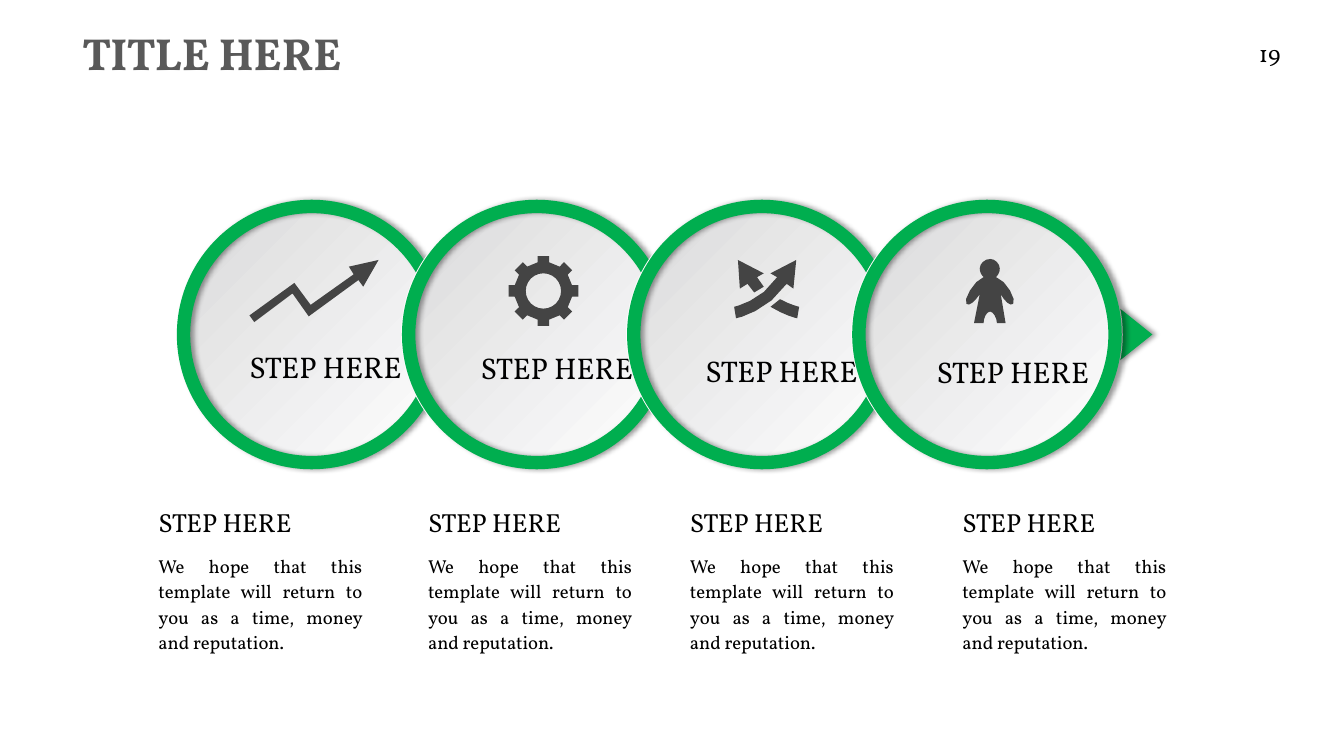
import math

import pptx
import pptx.dml.color
import pptx.enum.shapes
import pptx.enum.text
import pptx.oxml
import pptx.oxml.ns
import pptx.util

Inches = pptx.util.Inches
ALIGN = pptx.enum.text.PP_ALIGN
ANCHOR = pptx.enum.text.MSO_ANCHOR
SHAPE = pptx.enum.shapes.MSO_SHAPE

FONT = "Vollkorn"
GREEN, ICON_GRAY, TITLE_GRAY = "00AE4F", "444444", "595959"
BLACK, WHITE, SILVER = "000000", "FFFFFF", "D9D9DA"
MIDDLE, RADIUS, RING_WIDTH = 3.5, 1.41, 0.14
FIRST_CENTER, CENTER_STEP = 3.26, 2.355
STEP_TITLE = "STEP HERE"
STEP_TEXT = "We hope that this template will return to you as a time, money and reputation."
LABEL_PLACES = [(2.51, 3.6), (4.93, 3.61), (7.28, 3.64), (9.7, 3.65)]
COLUMN_LEFTS = [1.56, 4.38, 7.12, 9.97]

GROWTH_ARROW = [
    (3.96, 2.72), (3.65, 2.79), (3.7, 2.87), (3.25, 3.19), (3.08, 2.96), (2.61, 3.3),
    (2.66, 3.37), (3.06, 3.07), (3.23, 3.31), (3.75, 2.93), (3.8, 3),
]
CROSSED_ARROWS = [
    [(7.82, 2.97), (7.89, 3.06), (7.99, 3), (7.92, 2.9), (7.99, 2.86), (7.72, 2.72), (7.74, 3.02)],
    [(8.23, 2.97), (8.3, 3.02), (8.33, 2.72), (8.06, 2.86), (8.13, 2.9),
     (7.97, 3.15, 7.68, 3.21, 7.68, 3.21), (7.7, 3.33), (7.72, 3.33, 8.04, 3.25, 8.23, 2.97)],
    [(8.16, 3.13), (8.06, 3.21), (8.21, 3.3, 8.33, 3.33, 8.34, 3.33),
     (8.36, 3.21), (8.36, 3.21, 8.27, 3.19, 8.16, 3.13)],
]
PERSON = [
    (10.42, 2.9), (10.44, 2.88, 10.46, 2.85, 10.46, 2.81), (10.46, 2.76, 10.41, 2.71, 10.36, 2.71),
    (10.3, 2.71, 10.25, 2.76, 10.25, 2.81), (10.25, 2.85, 10.27, 2.88, 10.29, 2.9),
    (10.19, 2.93, 10.07, 3.15, 10.11, 3.18), (10.14, 3.21, 10.2, 3.15, 10.25, 3.08),
    (10.19, 3.38), (10.29, 3.38), (10.29, 3.33, 10.32, 3.26, 10.36, 3.26),
    (10.39, 3.26, 10.43, 3.33, 10.43, 3.38), (10.52, 3.38), (10.47, 3.08),
    (10.51, 3.15, 10.57, 3.21, 10.6, 3.18), (10.64, 3.15, 10.53, 2.93, 10.42, 2.9),
]


def color(value):
    return pptx.dml.color.RGBColor.from_string(value)


def apply_format(target, values):
    for name, value in values.items():
        setattr(target, name, value)


def write_text(box, text, size, paint=BLACK, bold=False, anchor=ANCHOR.TOP, **paragraph_format):
    frame = box.text_frame
    apply_format(frame, {
        "word_wrap": True,
        "auto_size": pptx.enum.text.MSO_AUTO_SIZE.NONE,
        "vertical_anchor": anchor,
    })
    para = frame.paragraphs[0]
    apply_format(para, {"alignment": ALIGN.LEFT, **paragraph_format})
    span = para.add_run()
    span.text = text
    apply_format(span.font, {"name": FONT, "size": pptx.util.Pt(size), "bold": bold})
    span.font.color.rgb = color(paint)


def add_text(page, left, top, width, height, text, size, **options):
    box = page.shapes.add_textbox(Inches(left), Inches(top), Inches(width), Inches(height))
    write_text(box, text, size, **options)


def flatten(segments, steps=4):
    points = [segments[0]]
    for segment in segments[1:]:
        if len(segment) == 2:
            points.append(segment)
            continue
        controls = [points[-1], segment[:2], segment[2:4], segment[4:]]
        for t in [i / steps for i in range(1, steps + 1)]:
            weights = [(1 - t) ** 3, 3 * t * (1 - t) ** 2, 3 * t * t * (1 - t), t ** 3]
            points.append(tuple(
                sum(w * c[axis] for w, c in zip(weights, controls)) for axis in (0, 1)
            ))
    return points


def paint_solid(shape, fill):
    shape.shadow.inherit = False
    shape.line.fill.background()
    shape.fill.solid()
    shape.fill.fore_color.rgb = color(fill)


def add_outline(page, contours, fill):
    contours = [[(Inches(x), Inches(y)) for x, y in contour] for contour in contours]
    builder = page.shapes.build_freeform(*contours[0][0])
    for index, contour in enumerate(contours):
        if index:
            builder.move_to(*contour[0])
        builder.add_line_segments(contour[1:], close=True)
    shape = builder.convert_to_shape()
    paint_solid(shape, fill)
    return shape


def add_round(page, kind, center, fill):
    shape = page.shapes.add_shape(
        kind, Inches(center - RADIUS), Inches(MIDDLE - RADIUS),
        Inches(2 * RADIUS), Inches(2 * RADIUS),
    )
    paint_solid(shape, fill)
    return shape


def add_soft_shadow(shape):
    effects = shape._element.spPr.find(pptx.oxml.ns.qn("a:effectLst"))
    effects.append(pptx.oxml.parse_xml(
        f'<a:outerShdw {pptx.oxml.ns.nsdecls("a")} blurRad="{pptx.util.Pt(4)}" '
        f'dist="{pptx.util.Pt(3)}" dir="0" algn="l" rotWithShape="0">'
        f'<a:srgbClr val="{BLACK}"><a:alpha val="40000"/></a:srgbClr></a:outerShdw>'
    ))


def add_step_circle(page, center):
    disc = add_round(page, SHAPE.OVAL, center, WHITE)
    disc.fill.gradient()
    disc.fill.gradient_angle = 315
    for stop, paint in zip(disc.fill.gradient_stops, (SILVER, WHITE)):
        stop.color.rgb = color(paint)
    disc.line.color.rgb = color(WHITE)
    disc.line.width = pptx.util.Pt(1.5)
    ring = add_round(page, SHAPE.DONUT, center, GREEN)
    ring.adjustments[0] = RING_WIDTH / (2 * RADIUS)
    add_soft_shadow(ring)


def add_pointer(page, center):
    corners = [(center + 1.38, MIDDLE - 0.28), (center + 1.73, MIDDLE), (center + 1.38, MIDDLE + 0.28)]
    add_soft_shadow(add_outline(page, [corners], GREEN))


def gear_contours(center_x=5.685, center_y=3.045, teeth=8):
    def turned(angle, along, across=0):
        return (center_x + along * math.cos(angle) - across * math.sin(angle),
                center_y + along * math.sin(angle) + across * math.cos(angle))

    tooth = [(0.3, -0.06), (0.365, -0.06), (0.365, 0.06), (0.3, 0.06)]
    rim = [turned(math.tau * i / teeth, *corner) for i in range(teeth) for corner in tooth]
    hole = [turned(-math.tau * i / 24, 0.185) for i in range(24)]
    return [rim, hole]


def add_step(page, index, icon):
    add_step_circle(page, FIRST_CENTER + index * CENTER_STEP)
    add_outline(page, icon, ICON_GRAY)
    add_text(page, *LABEL_PLACES[index], 1.89, 0.49, STEP_TITLE, 22.5)


def add_column(page, left):
    add_text(page, left, 5.25, 1.66, 0.43, STEP_TITLE, 19.7)
    add_text(page, left, 5.72, 2.33, 1.18, STEP_TEXT, 14.1,
             alignment=ALIGN.JUSTIFY, line_spacing=1.14)


def add_title(page, text):
    title = page.shapes.title
    apply_format(title, {
        "left": Inches(0.76), "top": Inches(0.21), "width": Inches(6.44), "height": Inches(0.67),
    })
    write_text(title, text, 33.8, paint=TITLE_GRAY, bold=True, anchor=ANCHOR.MIDDLE)


def main():
    deck = pptx.Presentation()
    apply_format(deck, {"slide_width": Inches(14.06), "slide_height": Inches(7.91)})
    page = deck.slides.add_slide(deck.slide_layouts[5])
    add_title(page, "TITLE HERE")
    add_text(page, 13.07, 0.36, 0.64, 0.54, "19", 18)
    icons = [
        [GROWTH_ARROW],
        gear_contours(),
        [flatten(contour) for contour in CROSSED_ARROWS],
        [flatten(PERSON)],
    ]
    add_pointer(page, FIRST_CENTER + 3 * CENTER_STEP)
    for index, icon in enumerate(icons):
        add_step(page, index, icon)
    for left in COLUMN_LEFTS:
        add_column(page, left)
    deck.save("out.pptx")


if __name__ == "__main__":
    main()
